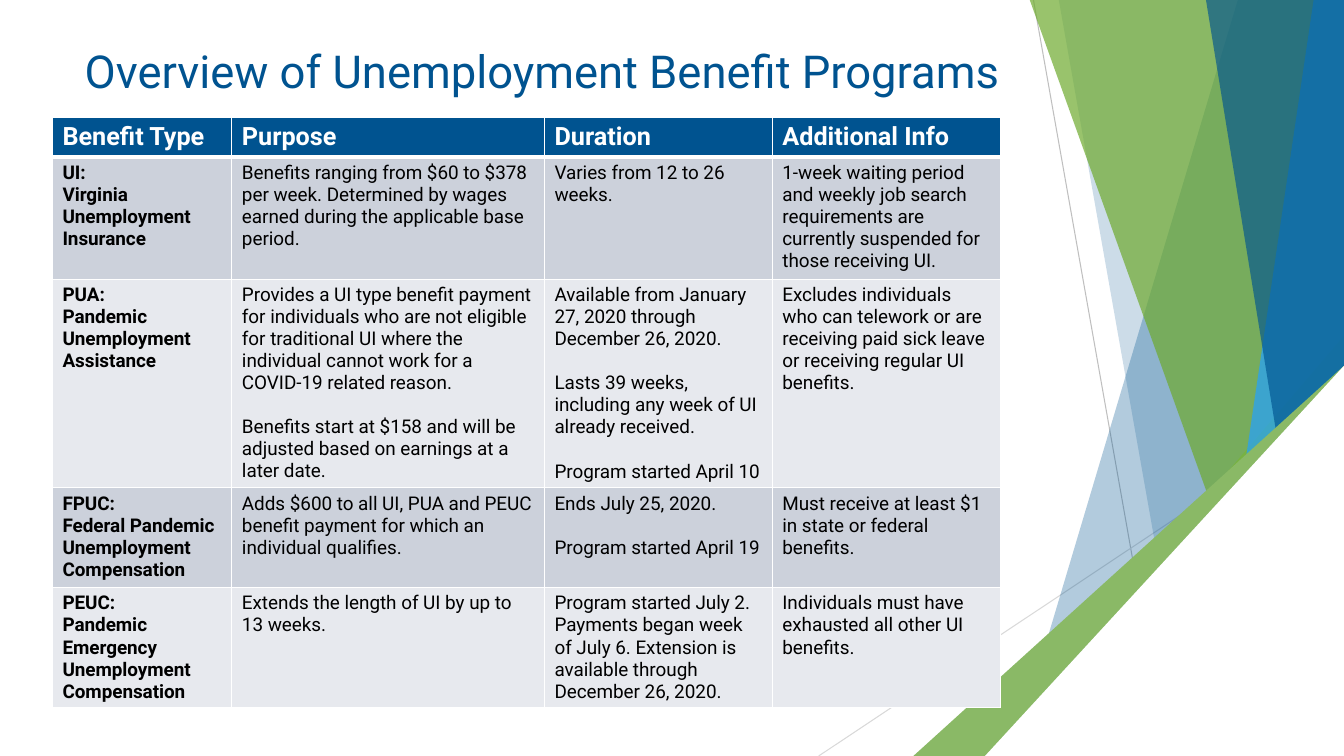
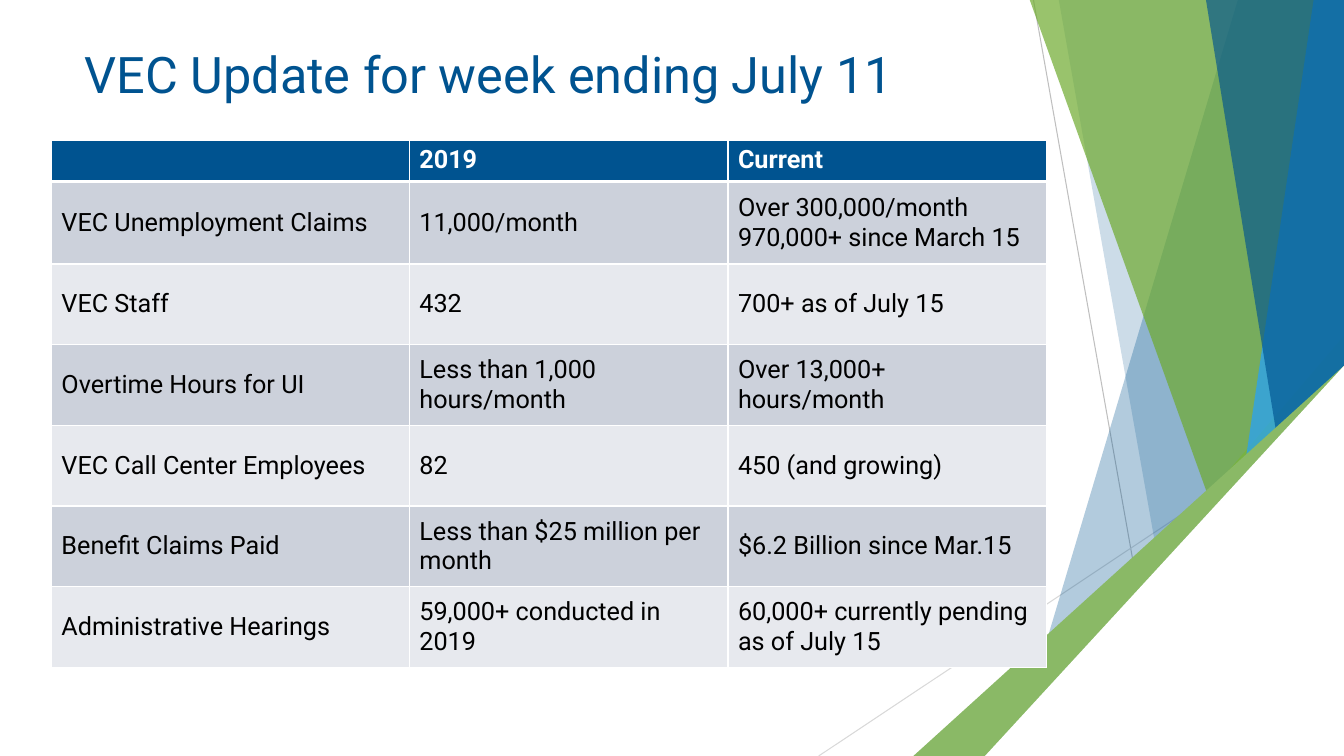
from dataclasses import dataclass
from lxml import etree
from pptx import Presentation
from pptx import util as u
from pptx.dml import color
from pptx.enum import shapes, text
from pptx.oxml import ns

KIND = shapes.MSO_SHAPE


# Theme: colours and type sizes
@dataclass(frozen=True)
class Theme:
    font: str = "Roboto"
    blue: str = "005390"
    sky: str = "23A2FF"
    lime: str = "92D050"
    leaf: str = "6EAA2E"
    green: str = "8AB966"
    white: str = "FFFFFF"
    black: str = "000000"
    bands: tuple = ("CCD1DB", "E7E9EE")
    rules: tuple = ("BFBFBF", "D9D9D9")
    title: float = 36
    tight: float = 32.4
    head: float = 18
    body: float = 18
    small: float = 13.5
    gap: float = 15.8


def rgb(code):
    return color.RGBColor.from_string(code)


def assign(item, vals):
    for key, val in vals.items():
        setattr(item, key, val)


def sub(node, tag, **vals):
    return etree.SubElement(node, ns.qn(tag), **vals)


class Deck:
    """Holds the style and the current slide."""

    def __init__(self, theme):
        self.theme = theme
        self.prs = Presentation()
        assign(self.prs, {"slide_width": u.Inches(13.33),
                          "slide_height": u.Inches(7.5)})
        self.layout = self.prs.slide_layouts[5]
        self.slide = None

    def add(self, name, size):
        first = self.slide is None
        self.slide = self.prs.slides.add_slide(self.layout)
        if first:
            self.paint()
        self.title(name, size)

    def label(self, para, words, size, code, bold=False):
        para.text = words
        for run in para.runs:
            assign(run.font, {"name": self.theme.font, "size": u.Pt(size),
                              "bold": bold})
            run.font.color.rgb = rgb(code)

    def title(self, name, size):
        box = self.slide.shapes.title
        assign(box, {"left": u.Inches(0.74), "top": u.Inches(0.38),
                     "width": u.Inches(9.4), "height": u.Inches(0.81)})
        frame = box.text_frame
        assign(frame, {"word_wrap": True, "auto_size": text.MSO_AUTO_SIZE.NONE,
                       "vertical_anchor": text.MSO_ANCHOR.TOP})
        para = frame.paragraphs[0]
        para.alignment = text.PP_ALIGN.LEFT
        self.label(para, name, size, self.theme.blue)

    # Backdrop elements
    def tint(self, shape, code, alpha):
        shape.shadow.inherit = False
        shape.fill.solid()
        shape.fill.fore_color.rgb = rgb(code)
        shape.line.fill.background()
        if alpha < 100:
            tone = next(shape._element.spPr.iter(ns.qn("a:srgbClr")))
            sub(tone, "a:alpha", val=str(alpha * 1000))
        return shape

    def line(self, ends, code):
        link = self.slide.shapes.add_connector(
            shapes.MSO_CONNECTOR.STRAIGHT, *map(u.Inches, ends))
        link.line.color.rgb = rgb(code)
        link.line.width = u.Pt(0.75)
        sub(link._element.spPr, "a:effectLst")
        return link

    def shard(self, top, low, code, alpha):
        """Band from a slanted left edge to the slide's right edge."""
        spots = [(u.Inches(x), u.Inches(y)) for x, y in
                 ((top, -0.01), (13.33, -0.01), (13.33, 7.5), (low, 7.5))]
        pen = self.slide.shapes.build_freeform(*spots[0], scale=1.0)
        pen.add_line_segments(spots[1:], close=True)
        return self.tint(pen.convert_to_shape(), code, alpha)

    def wedge(self, kind, left, top, code, alpha=100):
        """Triangle in the slide's bottom right corner."""
        shape = self.slide.shapes.add_shape(
            kind, *map(u.Inches, (left, top, 13.33 - left, 7.5 - top)))
        if kind == KIND.RIGHT_TRIANGLE:
            shape._element.spPr.find(ns.qn("a:xfrm")).set("flipH", "1")
        else:
            shape.adjustments[0] = 1
        return self.tint(shape, code, alpha)

    def paint(self):
        """Draw the backdrop once and hand it to the shared layout."""
        t = self.theme
        parts = [
            self.line((10.25, 0, 11.58, 7.5), t.rules[0]),
            self.line((13.33, 4.03, 8.12, 7.5), t.rules[1]),
            self.shard(12.28, 10.04, t.blue, 30),
            self.shard(10.5, 11.83, t.blue, 20),
            self.wedge(KIND.ISOSCELES_TRIANGLE, 9.77, 3.33, t.lime, 72),
            self.shard(10.21, 12.91, t.leaf, 70),
            self.shard(13.03, 11.92, t.sky, 70),
            self.shard(11.96, 13.18, t.blue, 65),
            self.wedge(KIND.ISOSCELES_TRIANGLE, 11.34, 3.93, t.blue, 80),
            self.wedge(KIND.RIGHT_TRIANGLE, 9.06, 3.63, t.green),
            self.wedge(KIND.RIGHT_TRIANGLE, 9.77, 3.63, t.white),
        ]
        tree = self.layout.element.cSld.spTree
        for part in parts:
            tree.append(part._element)

    # Tables
    def edges(self, cell, head):
        props = cell._tc.get_or_add_tcPr()
        for side in "LRTB":
            width = 3 if head and side == "B" else 1
            edge = sub(props, "a:ln" + side, w=str(u.Pt(width)))
            sub(sub(edge, "a:solidFill"), "a:srgbClr", val=self.theme.white)

    def cell(self, cell, words, fill, head, size, code, bold, anchor):
        self.edges(cell, head)
        cell.fill.solid()
        cell.fill.fore_color.rgb = rgb(fill)
        cell.vertical_anchor = anchor
        frame = cell.text_frame
        para = frame.paragraphs[0]
        for b, block in enumerate(words.split("\n\n")):
            for n, line in enumerate(block.split("\n")):
                if b or n:
                    para = frame.add_paragraph()
                if b and not n:
                    para.space_before = u.Pt(self.theme.gap)
                self.label(para, line, size, code, bold)

    def table(self, left, top, cols, highs, rows, size, anchor, lead=False):
        """Fill a banded table; lead makes the first column bold."""
        t = self.theme
        grid = self.slide.shapes.add_table(
            len(rows), len(cols),
            *map(u.Inches, (left, top, sum(cols), sum(highs)))).table
        for col, wide in zip(grid.columns, cols):
            col.width = u.Inches(wide)
        for r, (row, high) in enumerate(zip(rows, highs)):
            grid.rows[r].height = u.Inches(high)
            for c, words in enumerate(row):
                if r == 0:
                    look = (t.blue, True, t.head, t.white, True,
                            text.MSO_ANCHOR.TOP)
                else:
                    look = (t.bands[(r - 1) % 2], False, size, t.black,
                            lead and c == 0, anchor)
                self.cell(grid.cell(r, c), words, *look)


# Table contents; a blank line inside a cell becomes paragraph spacing
PLANS = [
    ("Benefit Type", "Purpose", "Duration", "Additional Info"),
    ("UI:\nVirginia Unemployment Insurance",
     "Benefits ranging from $60 to $378 per week. Determined by wages earned "
     "during the applicable base period.",
     "Varies from 12 to 26 weeks.",
     "1-week waiting period and weekly job search requirements are currently "
     "suspended for those receiving UI."),
    ("PUA:\nPandemic Unemployment Assistance",
     "Provides a UI type benefit payment for individuals who are not eligible "
     "for traditional UI where the individual cannot work for a COVID-19 "
     "related reason.\n\nBenefits start at $158 and will be adjusted based on "
     "earnings at a later date.",
     "Available from January 27, 2020 through December 26, 2020.\n\n"
     "Lasts 39 weeks, including any week of UI already received.\n\n"
     "Program started April 10",
     "Excludes individuals who can telework or are receiving paid sick leave "
     "or receiving regular UI benefits."),
    ("FPUC:\nFederal Pandemic\nUnemployment Compensation",
     "Adds $600 to all UI, PUA and PEUC benefit payment for which an "
     "individual qualifies.",
     "Ends July 25, 2020.\n\nProgram started April 19",
     "Must receive at least $1 in state or federal benefits."),
    ("PEUC:\nPandemic Emergency Unemployment Compensation",
     "Extends the length of UI by up to 13 weeks.",
     "Program started July 2. Payments began week of July 6. Extension is "
     "available through December 26, 2020.",
     "Individuals must have exhausted all other UI benefits."),
]

STATS = [
    ("", "2019", "Current"),
    ("VEC Unemployment Claims", "11,000/month",
     "Over 300,000/month\v970,000+ since March 15"),
    ("VEC Staff", "432", "700+ as of July 15"),
    ("Overtime Hours for UI", "Less than 1,000 hours/month",
     "Over 13,000+ hours/month"),
    ("VEC Call Center Employees", "82", "450 (and growing)"),
    ("Benefit Claims Paid", "Less than $25 million per month",
     "$6.2 Billion since Mar.15"),
    ("Administrative Hearings", "59,000+ conducted in 2019",
     "60,000+ currently pending as of July 15"),
]


def main():
    theme = Theme()
    deck = Deck(theme)

    # Benefit programs
    deck.add("Overview of Unemployment Benefit Programs", theme.tight)
    deck.table(0.52, 1.16, (1.78, 3.1, 2.26, 2.26),
               (0.4, 1.21, 2.06, 0.99, 1.19), PLANS, theme.small,
               text.MSO_ANCHOR.TOP, lead=True)

    # Weekly update
    deck.add("VEC Update for week ending July 11", theme.title)
    deck.table(0.51, 1.39, (3.55, 3.16, 3.16), [0.41, 0.82] + [0.8] * 5,
               STATS, theme.body, text.MSO_ANCHOR.MIDDLE)

    deck.prs.save("out.pptx")


if __name__ == "__main__":
    main()
